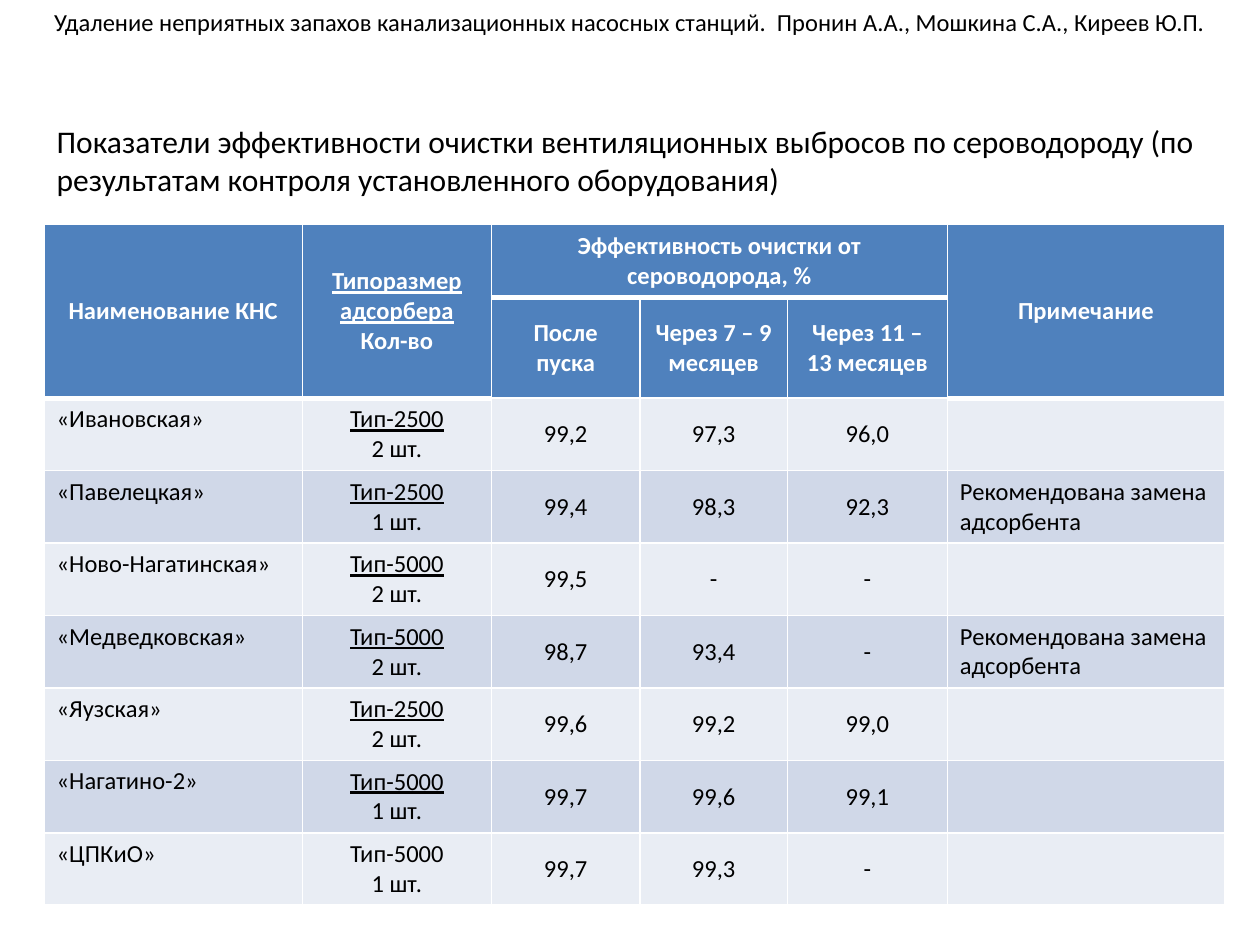
from dataclasses import dataclass

from lxml import etree
from pptx import Presentation
from pptx.dml.color import RGBColor
from pptx.enum.shapes import MSO_SHAPE
from pptx.enum.text import MSO_ANCHOR, MSO_AUTO_SIZE, PP_ALIGN
from pptx.oxml.ns import qn
from pptx.util import Inches, Pt

RECT = MSO_SHAPE.RECTANGLE
LEFT, CENTER = PP_ALIGN.LEFT, PP_ALIGN.CENTER
TOP, MIDDLE = MSO_ANCHOR.TOP, MSO_ANCHOR.MIDDLE
FIT_SHAPE = MSO_AUTO_SIZE.SHAPE_TO_FIT_TEXT
TITLE_ONLY = 5


@dataclass(frozen=True)
class Theme:
    font: str = "Calibri"
    title_size: int = 18
    text_size: int = 14
    black: str = "000000"
    white: str = "FFFFFF"
    header: str = "4F81BD"
    bands: tuple = ("E9EDF4", "D0D8E8")
    thin: int = 1
    thick: int = 3


THEME = Theme()

COL_WIDTHS = (2.05, 1.5, 1.18, 1.17, 1.27, 2.2)
ROW_HEIGHTS = (0.58, 0.8) + (0.575,) * 7
HEADERS = (
    (0, 0, 1, 0, [[("Наименование КНС", False)]]),
    (0, 1, 1, 1, [[("Типоразмер адсорбера ", True), ("Кол-во", False)]]),
    (0, 2, 0, 4, [[("Эффективность очистки от сероводорода, %", False)]]),
    (0, 5, 1, 5, [[("Примечание", False)]]),
    (1, 2, 1, 2, [[("После пуска", False)]]),
    (1, 3, 1, 3, [[("Через 7 – 9 месяцев", False)]]),
    (1, 4, 1, 4, [[("Через 11 – 13 месяцев", False)]]),
)
REPLACE = "Рекомендована замена адсорбента"
SMALL, LARGE = "Тип-2500", "Тип-5000"
STATIONS = (
    ("«Ивановская»", SMALL, True, "2 шт.", "99,2", "97,3", "96,0", ""),
    ("«Павелецкая»", SMALL, True, "1 шт.", "99,4", "98,3", "92,3", REPLACE),
    ("«Ново-Нагатинская»", LARGE, True, "2 шт.", "99,5", "-", "-", ""),
    ("«Медведковская»", LARGE, True, "2 шт.", "98,7", "93,4", "-", REPLACE),
    ("«Яузская»", SMALL, True, "2 шт.", "99,6", "99,2", "99,0", ""),
    ("«Нагатино-2»", LARGE, True, "1 шт.", "99,7", "99,6", "99,1", ""),
    ("«ЦПКиО»", LARGE, False, "1 шт.", "99,7", "99,3", "-", ""),
)


def write_text(tf, paragraphs, size=THEME.text_size, color=THEME.black,
               bold=False, align=LEFT, anchor=TOP):
    tf.word_wrap = True
    tf.vertical_anchor = anchor
    for i, runs in enumerate(paragraphs):
        p = tf.paragraphs[0] if i == 0 else tf.add_paragraph()
        p.alignment = align
        for text, underline in runs:
            r = p.add_run()
            r.text = text
            r.font.name = THEME.font
            r.font.size = Pt(size)
            r.font.bold = bold
            r.font.underline = underline
            r.font.color.rgb = RGBColor.from_string(color)


def place(sp, box):
    sp.left, sp.top, sp.width, sp.height = (Inches(v) for v in box)


def style_cell(cell, fill, bottom):
    tcPr = cell._tc.get_or_add_tcPr()
    sides = (("lnL", THEME.thin), ("lnR", THEME.thin), ("lnT", THEME.thin), ("lnB", bottom))
    for tag, width in sides:
        ln = etree.SubElement(tcPr, qn(f"a:{tag}"), w=str(Pt(width)))
        solid = etree.SubElement(ln, qn("a:solidFill"))
        etree.SubElement(solid, qn("a:srgbClr"), val=THEME.white)
    cell.fill.solid()
    cell.fill.fore_color.rgb = RGBColor.from_string(fill)


def add_banner(s, box):
    sp = s.shapes.add_shape(RECT, *(Inches(v) for v in box))
    sp.shadow.inherit = False
    sp.fill.solid()
    sp.fill.fore_color.rgb = RGBColor.from_string(THEME.white)
    sp.line.fill.background()
    text = ("Удаление неприятных запахов канализационных насосных станций.  "
            "Пронин А.А., Мошкина С.А., Киреев Ю.П.")
    write_text(sp.text_frame, [[(text, False)]], align=CENTER, anchor=MIDDLE)
    sp.text_frame.auto_size = FIT_SHAPE


def add_title(s, box):
    sp = s.shapes.title
    place(sp, box)
    text = ("Показатели эффективности очистки вентиляционных выбросов по сероводороду "
            "(по результатам контроля установленного оборудования)")
    write_text(sp.text_frame, [[(text, False)]], size=THEME.title_size)
    sp.text_frame.auto_size = FIT_SHAPE


def add_efficiency_table(s, box):
    table = s.shapes.add_table(len(ROW_HEIGHTS), len(COL_WIDTHS),
                               *(Inches(v) for v in box)).table
    for col, width in zip(table.columns, COL_WIDTHS):
        col.width = Inches(width)
    for i, (row, height) in enumerate(zip(table.rows, ROW_HEIGHTS)):
        row.height = Inches(height)
        fill = THEME.header if i < 2 else THEME.bands[i % 2]
        for cell in row.cells:
            style_cell(cell, fill, THEME.thick if i == 0 else THEME.thin)

    for top, left, bottom, right, paragraphs in HEADERS:
        cell = table.cell(top, left)
        if (top, left) != (bottom, right):
            cell.merge(table.cell(bottom, right))
        write_text(cell.text_frame, paragraphs, color=THEME.white, bold=True, align=CENTER)
        cell.vertical_anchor = MIDDLE

    for i, (name, model, underline, count, *values, note) in enumerate(STATIONS, start=2):
        write_text(table.cell(i, 0).text_frame, [[(name, False)]])
        middle = [[[(model, underline)], [(count, False)]]]
        middle += [[[(value, False)]] for value in values]
        for j, paragraphs in enumerate(middle, start=1):
            cell = table.cell(i, j)
            write_text(cell.text_frame, paragraphs, align=CENTER)
            cell.vertical_anchor = MIDDLE
        if note:
            write_text(table.cell(i, 5).text_frame, [[(note, False)]])


def main():
    prs = Presentation()
    prs.slide_width, prs.slide_height = Inches(10), Inches(7.5)
    s = prs.slides.add_slide(prs.slide_layouts[TITLE_ONLY])
    add_efficiency_table(s, (0.35, 1.78, sum(COL_WIDTHS), sum(ROW_HEIGHTS)))
    add_title(s, (0.35, 0.92, 9.29, 0.71))
    add_banner(s, (0, 0, 10, 0.34))
    prs.save("out.pptx")


if __name__ == "__main__":
    main()
